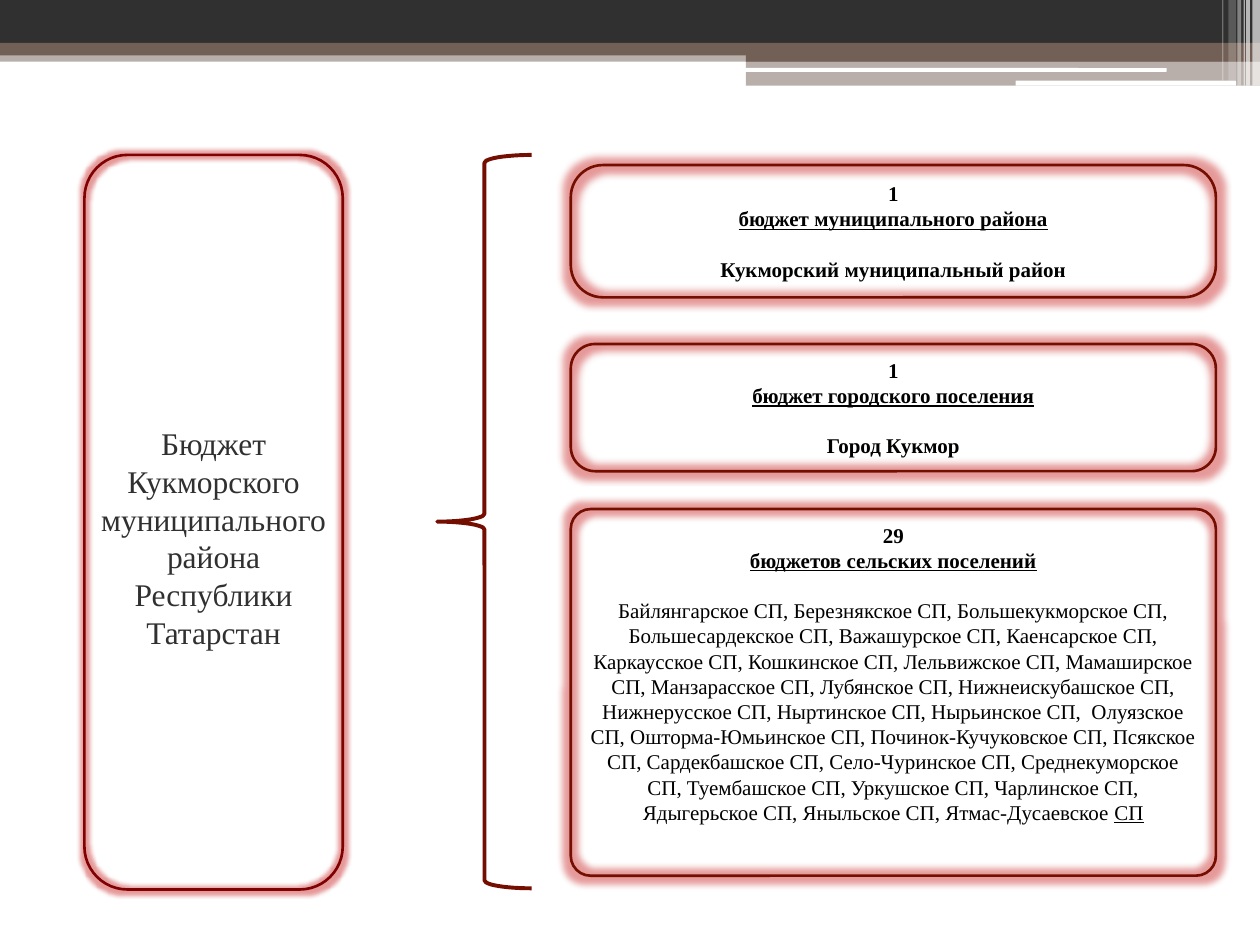
from pptx import Presentation
from pptx.dml.color import RGBColor
from pptx.enum.shapes import MSO_SHAPE
from pptx.enum.text import MSO_ANCHOR, PP_ALIGN
from pptx.oxml.ns import qn
from pptx.util import Inches, Pt
from lxml.etree import SubElement

FONT = "Times New Roman"
DARK, BROWN, WHITE = "303030", "726056", "FFFFFF"
FRAME, MAROON, GLOW = "800101", "730E00", "C00000"

# left, top, width, height, colour, opacity in percent
BANDS = [
    (0, 0.4, 10, 0.09, BROWN, 50),
    (0, 0, 10, 0.34, DARK, 100),
    (0, 0.34, 10, 0.1, BROWN, 100),
    (5.92, 0.39, 4.08, 0.1, BROWN, 100),
    (5.92, 0.48, 4.08, 0.2, BROWN, 50),
]
WHITE_BARS = [(5.91, 0.54, 3.35, 0.03), (8.06, 0.64, 1.75, 0.04)]
# left, width, height, opacity in percent
STRIPES = [
    (9.94, 0.06, 0.68, 65), (9.89, 0.03, 0.68, 65), (9.87, 0.01, 0.68, 60),
    (9.82, 0.03, 0.68, 40), (9.75, 0.06, 0.64, 20), (9.7, 0.01, 0.64, 30),
]

VILLAGES = (
    "Байлянгарское СП, Березнякское СП, Большекукморское СП, "
    "Большесардекское СП, Важашурское СП, Каенсарское СП, Каркаусское СП, "
    "Кошкинское СП, Лельвижское СП, Мамаширское СП, Манзарасское СП, "
    "Лубянское СП, Нижнеискубашское СП, Нижнерусское СП, Ныртинское СП, "
    "Нырьинское СП,  Олуязское СП, Ошторма-Юмьинское СП, "
    "Починок-Кучуковское СП, Псякское СП, Сардекбашское СП, "
    "Село-Чуринское СП, Среднекуморское СП, Туембашское СП, Уркушское СП, "
    "Чарлинское СП, Ядыгерьское СП, Яныльское СП, Ятмас-Дусаевское "
)
BOLD, UNDERLINED = {"bold": True}, {"underline": True}
# top, height, corner, anchor, bottom inset, count, heading, detail runs
BUDGETS = [
    (1.31, 1.05, 0.243, MSO_ANCHOR.TOP, 0.05, "1",
     "бюджет муниципального района",
     [("Кукморский муниципальный район", BOLD)]),
    (2.73, 1.01, 0.192, MSO_ANCHOR.TOP, 0.05, "1",
     "бюджет городского поселения", [("Город Кукмор", BOLD)]),
    (4.04, 2.91, 0.054, MSO_ANCHOR.MIDDLE, 0.35, "29",
     "бюджетов сельских поселений", [(VILLAGES, {}), ("СП", UNDERLINED)]),
]


def rgb(color):
    return RGBColor.from_string(color)


def add_shape(s, kind, box, corner=None):
    sp = s.shapes.add_shape(kind, *map(Inches, box))
    sp.shadow.inherit = False
    if corner is not None:
        sp.adjustments[0] = corner
    return sp


def add_block(s, kind, box, color, opacity=100, corner=None):
    """Add a filled shape without an outline."""
    sp = add_shape(s, kind, box, corner)
    sp.fill.solid()
    sp.fill.fore_color.rgb = rgb(color)
    sp.line.fill.background()
    if opacity < 100:
        clr = sp.fill._xPr.find(".//" + qn("a:srgbClr"))
        SubElement(clr, qn("a:alpha"), val=str(opacity * 1000))


def add_outline(s, kind, box, color, width, corner=None):
    sp = add_shape(s, kind, box, corner)
    sp.fill.background()
    sp.line.color.rgb = rgb(color)
    sp.line.width = Pt(width)
    return sp


def add_glow(sp, radius):
    effects = sp._element.spPr.find(qn("a:effectLst"))
    glow = SubElement(effects, qn("a:glow"), rad=str(Pt(radius)))
    clr = SubElement(glow, qn("a:srgbClr"), val=GLOW)
    SubElement(clr, qn("a:alpha"), val="40000")


def add_run(p, text, size, color, style):
    r = p.add_run()
    r.text = text
    r.font.color.rgb = rgb(color)
    for name, value in {"name": FONT, "size": Pt(size), **style}.items():
        setattr(r.font, name, value)


def add_header(s):
    for *box, color, opacity in BANDS:
        add_block(s, MSO_SHAPE.RECTANGLE, box, color, opacity)
    for box in WHITE_BARS:
        add_block(s, MSO_SHAPE.ROUNDED_RECTANGLE, box, WHITE, corner=0.167)
    for left, width, height, opacity in STRIPES:
        add_block(s, MSO_SHAPE.RECTANGLE, (left, 0, width, height), WHITE, opacity)


def add_title(s):
    tf = s.shapes.add_textbox(*map(Inches, (0.67, 1.39, 2.05, 5.75))).text_frame
    tf.word_wrap = True
    tf.vertical_anchor = MSO_ANCHOR.MIDDLE
    p = tf.paragraphs[0]
    p.alignment = PP_ALIGN.CENTER
    lines = "Бюджет Кукморского муниципального района", "Республики Татарстан"
    for i, line in enumerate(lines):
        if i:
            p.add_line_break()
        add_run(p, line, 18, DARK, {})
    frame = add_outline(s, MSO_SHAPE.ROUNDED_RECTANGLE,
                        (0.67, 1.23, 2.05, 5.83), FRAME, 1.5)
    add_glow(frame, 5)


def add_budget(s, top, height, corner, anchor, bottom, count, heading, detail):
    sp = add_outline(s, MSO_SHAPE.ROUNDED_RECTANGLE,
                     (4.53, top, 5.12, height), MAROON, 1.5, corner)
    add_glow(sp, 8)
    tf = sp.text_frame
    tf.word_wrap = True
    tf.vertical_anchor = anchor
    tf.margin_bottom = Inches(bottom)
    paragraphs = [[(count, BOLD)], [(heading, BOLD | UNDERLINED)], detail]
    for i, runs in enumerate(paragraphs):
        p = tf.add_paragraph() if i else tf.paragraphs[0]
        p.alignment = PP_ALIGN.CENTER
        if runs is detail:
            p.space_before = Pt(14.4)
        for text, style in runs:
            add_run(p, text, 12, "000000", style)


def main():
    prs = Presentation()
    prs.slide_width, prs.slide_height = Inches(10), Inches(7.5)
    s = prs.slides.add_slide(prs.slide_layouts[6])
    add_header(s)
    add_title(s)
    add_outline(s, MSO_SHAPE.LEFT_BRACE, (3.47, 1.23, 0.75, 5.82), MAROON, 2.25)
    for budget in BUDGETS:
        add_budget(s, *budget)
    prs.save("out.pptx")


if __name__ == "__main__":
    main()
